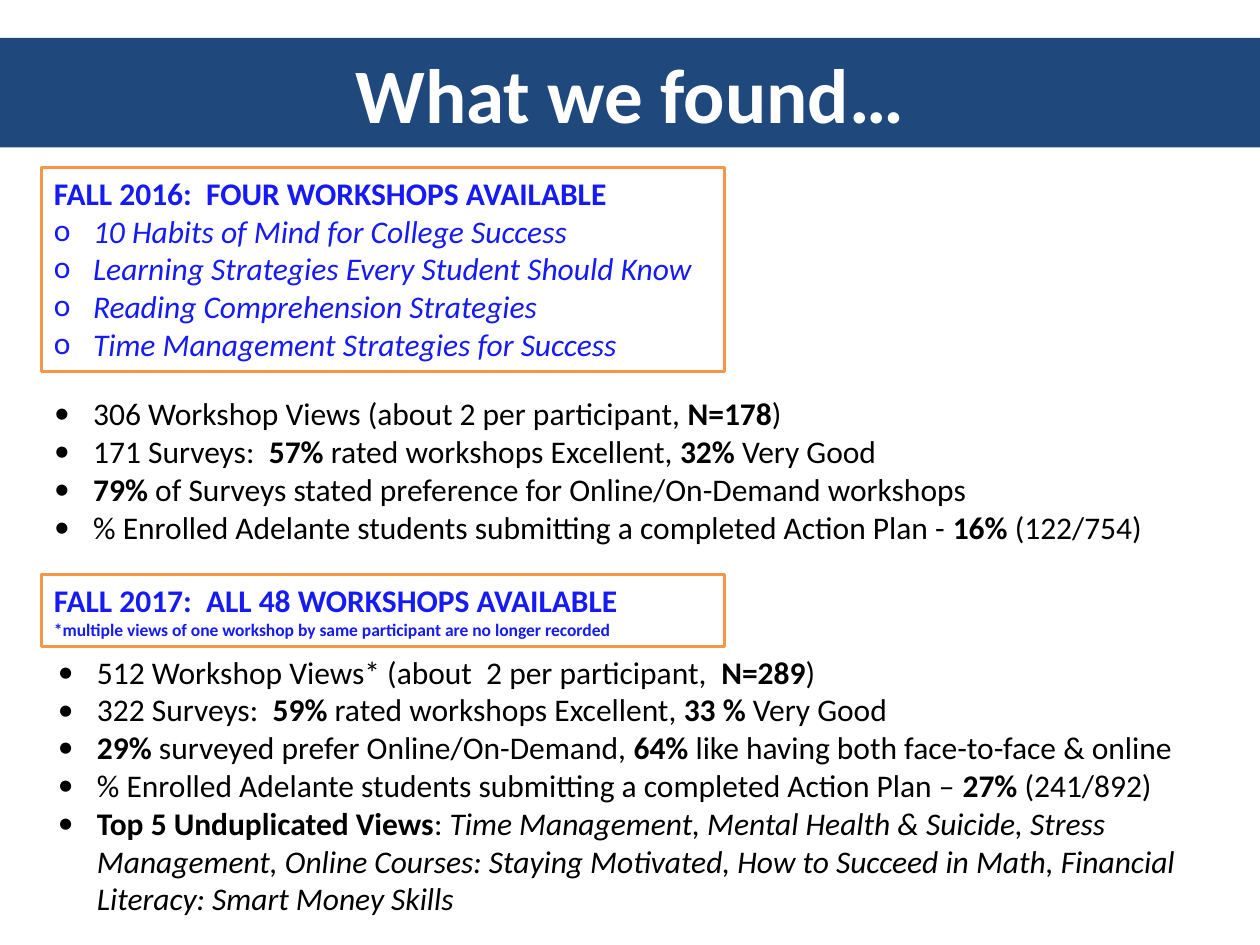
import pptx
import pptx.dml.color
import pptx.enum.shapes
import pptx.enum.text
import pptx.oxml.ns
import pptx.util
from lxml import etree

RGBColor = pptx.dml.color.RGBColor
NAVY = RGBColor(0x1F, 0x49, 0x7D)
ORANGE = RGBColor(0xF7, 0x96, 0x46)
BLUE = RGBColor(0x15, 0x1A, 0xF7)
BLACK = RGBColor(0, 0, 0)
WHITE = RGBColor(0xFF, 0xFF, 0xFF)

EMU_PER_PX = 9144  # 100 px to the inch
BOLD, ITALIC = "bold", "italic"
TWO_CONTENT_LAYOUT = 3


def px(length):
    return pptx.util.Emu(length * EMU_PER_PX)


class SlideWriter:
    font_name = "Calibri"
    text_size = 18
    indent = 31

    def __init__(self, slide):
        self.slide = slide

    def place(self, shape, left, top, width, height):
        shape.left, shape.top = px(left), px(top)
        shape.width, shape.height = px(width), px(height)

    def prepare_frame(self, shape, anchor):
        frame = shape.text_frame
        frame.word_wrap = True
        frame.auto_size = pptx.enum.text.MSO_AUTO_SIZE.NONE
        frame.vertical_anchor = anchor
        return frame

    def add_bullet(self, para, character):
        properties = para._p.get_or_add_pPr()
        properties.set("marL", str(px(self.indent)))
        properties.set("indent", str(px(-self.indent)))
        for tag, name, value in (("a:buFont", "typeface", self.font_name),
                                 ("a:buChar", "char", character)):
            element = etree.SubElement(properties, pptx.oxml.ns.qn(tag))
            element.set(name, value)

    def write_para(self, para, spans, color, size=text_size, bullet=None,
                   align=pptx.enum.text.PP_ALIGN.LEFT):
        """Write spans, each a plain string or a (text, style) pair."""
        para.alignment = align
        para.space_before = pptx.util.Pt(0)
        if bullet:
            self.add_bullet(para, bullet)
        for span in spans:
            text, style = (span, None) if isinstance(span, str) else span
            run = para.add_run()
            run.text = text
            run.font.name = self.font_name
            run.font.size = pptx.util.Pt(size)
            run.font.color.rgb = color
            run.font.bold = style == BOLD
            run.font.italic = style == ITALIC

    def title(self, text, *bounds):
        shape = self.slide.shapes.title
        self.place(shape, *bounds)
        shape.fill.solid()
        shape.fill.fore_color.rgb = NAVY
        frame = self.prepare_frame(shape, pptx.enum.text.MSO_ANCHOR.MIDDLE)
        self.write_para(frame.paragraphs[0], [(text, BOLD)], WHITE, 44,
                        align=pptx.enum.text.PP_ALIGN.CENTER)

    def findings(self, placeholder_index, items, *bounds):
        shape = self.slide.placeholders[placeholder_index]
        self.place(shape, *bounds)
        frame = self.prepare_frame(shape, pptx.enum.text.MSO_ANCHOR.TOP)
        for index, spans in enumerate(items):
            para = frame.add_paragraph() if index else frame.paragraphs[0]
            self.write_para(para, spans, BLACK, bullet="•")

    def term_box(self, heading, top, height, workshops=(), footnote=None):
        box = self.slide.shapes.add_shape(
            pptx.enum.shapes.MSO_SHAPE.RECTANGLE,
            px(33), px(top), px(542), px(height))
        box.shadow.inherit = False
        box.fill.solid()
        box.fill.fore_color.rgb = WHITE
        box.line.color.rgb = ORANGE
        box.line.width = pptx.util.Pt(2)
        frame = self.prepare_frame(box, pptx.enum.text.MSO_ANCHOR.TOP)
        self.write_para(frame.paragraphs[0], [(heading, BOLD)], BLUE)
        for workshop in workshops:
            self.write_para(frame.add_paragraph(), [(workshop, ITALIC)], BLUE,
                            bullet="o")
        if footnote:
            self.write_para(frame.add_paragraph(), [(footnote, BOLD)], BLUE, 10)


WORKSHOPS_2016 = [
    "10 Habits of Mind for College Success",
    "Learning Strategies Every Student Should Know",
    "Reading Comprehension Strategies",
    "Time Management Strategies for Success",
]
FINDINGS_2016 = [
    ["306 Workshop Views (about 2 per participant, ", ("N=178", BOLD), ")"],
    ["171 Surveys:  ", ("57%", BOLD), " rated workshops Excellent, ",
     ("32%", BOLD), " Very Good"],
    [("79%", BOLD),
     " of Surveys stated preference for Online/On-Demand workshops"],
    ["% Enrolled Adelante students submitting a completed Action Plan - ",
     ("16%", BOLD), " (122/754)"],
]
FINDINGS_2017 = [
    ["512 Workshop Views* (about  2 per participant,  ", ("N=289", BOLD), ")"],
    ["322 Surveys:  ", ("59%", BOLD), " rated workshops Excellent, ",
     ("33 %", BOLD), " Very Good"],
    [("29%", BOLD), " surveyed prefer Online/On-Demand, ", ("64%", BOLD),
     " like having both face-to-face & online"],
    ["% Enrolled Adelante students submitting a completed Action Plan – ",
     ("27%", BOLD), " (241/892)"],
    [("Top 5 Unduplicated Views", BOLD), ": ",
     ("Time Management, Mental Health & Suicide, Stress Management, "
      "Online Courses: Staying Motivated, How to Succeed in Math, "
      "Financial Literacy: Smart Money Skills", ITALIC)],
]


def main():
    deck = pptx.Presentation()
    deck.slide_width, deck.slide_height = px(1000), px(750)
    layout = deck.slide_layouts[TWO_CONTENT_LAYOUT]
    writer = SlideWriter(deck.slides.add_slide(layout))

    writer.title("What we found…", 0, 30, 1000, 87)
    writer.term_box("FALL 2016:  FOUR WORKSHOPS AVAILABLE", 133, 162,
                    workshops=WORKSHOPS_2016)
    writer.findings(1, FINDINGS_2016, 33, 308, 950, 131)
    writer.term_box("FALL 2017:  ALL 48 WORKSHOPS AVAILABLE", 456, 57,
                    footnote="*multiple views of one workshop by same "
                             "participant are no longer recorded")
    writer.findings(2, FINDINGS_2017, 36, 513, 950, 252)

    deck.save("out.pptx")


if __name__ == "__main__":
    main()
